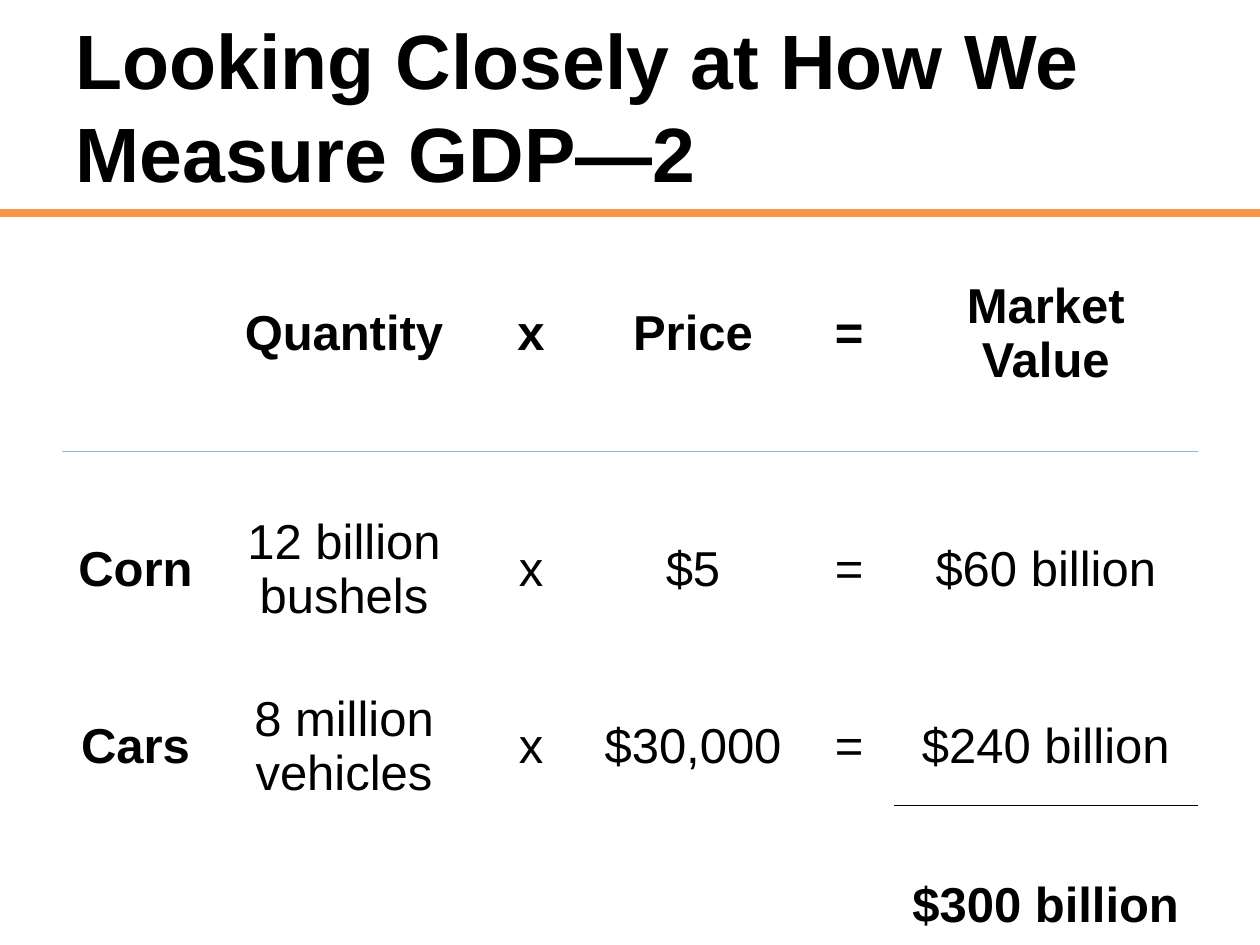
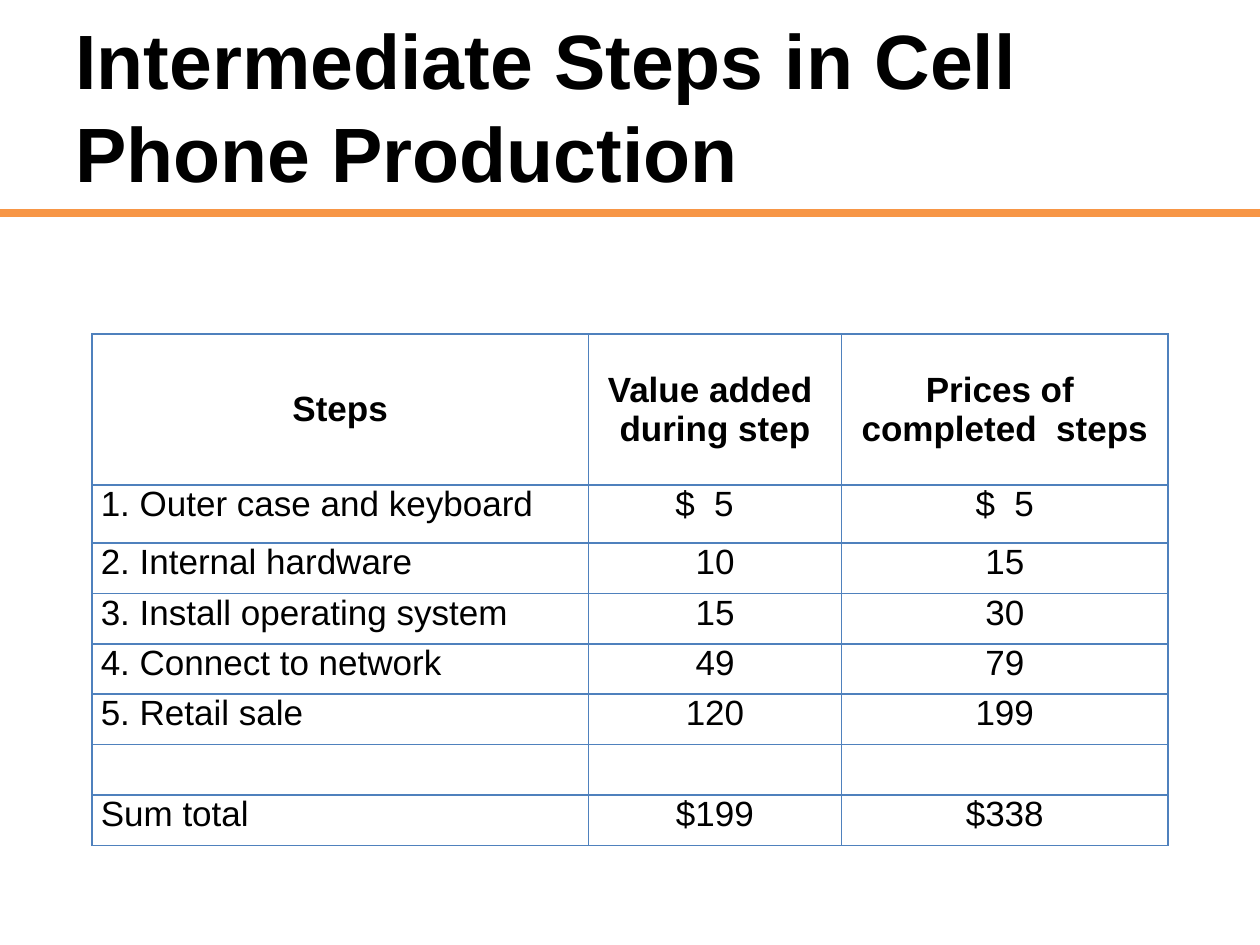
from lxml.etree import SubElement
from pptx import Presentation
from pptx.dml.color import RGBColor
from pptx.enum.shapes import MSO_CONNECTOR
from pptx.enum.text import MSO_ANCHOR, PP_ALIGN
from pptx.oxml.ns import qn
from pptx.util import Inches, Pt

COLORS = {"text": "000000", "rule": "F79646", "header_line": "95B3D7", "grid": "4F81BD"}
FONT = "Arial"
WIDTH, HEIGHT = 10, 7.5
MARGIN = WIDTH / 20
TITLE_HEIGHT, RULE_TOP = 1.67, 1.69
CELL_INSETS = {"margin_left": 0.07, "margin_right": 0.07, "margin_top": 0, "margin_bottom": 0}
TITLE_FORMAT = {"name": FONT, "size": Pt(44), "bold": True}
SIDES = {"left": "a:lnL", "right": "a:lnR", "top": "a:lnT", "bottom": "a:lnB"}
CENTERED_MIDDLE = (PP_ALIGN.CENTER, MSO_ANCHOR.MIDDLE)

SPACER = [""] * 6
MARKET_VALUE = {
    "title": "Looking Closely at How We Measure GDP—2",
    "origin": (MARGIN, 2.18),
    "columns": [1.15, 2.16, 0.81, 1.76, 0.72, 2.4],
    "rows": [0.93, 0.47, 0.47, 0.93, 0.47, 0.93, 0.47, 0.65],
    "cells": [
        ["", "Quantity", "x", "Price", "=", "Market Value"],
        SPACER,
        SPACER,
        ["Corn", "12 billion bushels", "x", "$5", "=", "$60 billion"],
        SPACER,
        ["Cars", "8 million vehicles", "x", "$30,000", "=", "$240 billion"],
        SPACER,
        ["", "", "", "", "", "$300 billion"],
    ],
    "size": 28,
}
PHONE_STEPS = {
    "title": "Intermediate Steps in Cell Phone Production",
    "origin": (0.73, 2.65),
    "columns": [3.94, 2.01, 2.59],
    "rows": [1.2, 0.46] + [0.4] * 6,
    "cells": [
        ["Steps", "Value added \nduring step", "Prices of \ncompleted  steps"],
        ["1. Outer case and keyboard", "$  5", "$  5"],
        ["2. Internal hardware", "10", "15"],
        ["3. Install operating system", "15", "30"],
        ["4. Connect to network", "49", "79"],
        ["5. Retail sale", "120", "199"],
        ["", "", ""],
        ["Sum total", "$199", "$338"],
    ],
    "size": 20,
}


def set_attributes(target, values):
    for name, value in values.items():
        setattr(target, name, value)


def format_font(font, values):
    set_attributes(font, values)
    font.color.rgb = RGBColor.from_string(COLORS["text"])


def add_titled_slide(presentation, title):
    slide = presentation.slides.add_slide(presentation.slide_layouts[6])
    rule = slide.shapes.add_connector(
        MSO_CONNECTOR.STRAIGHT, 0, Inches(RULE_TOP), Inches(WIDTH), Inches(RULE_TOP))
    rule.line.width = Pt(4.5)
    rule.line.color.rgb = RGBColor.from_string(COLORS["rule"])
    SubElement(rule.element.spPr, qn("a:effectLst"))
    title_box = slide.shapes.add_textbox(
        Inches(MARGIN), 0, Inches(WIDTH - 2 * MARGIN), Inches(TITLE_HEIGHT))
    frame = title_box.text_frame
    set_attributes(frame, {"word_wrap": True, "vertical_anchor": MSO_ANCHOR.MIDDLE, "text": title})
    format_font(frame.paragraphs[0].runs[0].font, TITLE_FORMAT)
    return slide


def draw_borders(cell, borders):
    properties = cell._tc.get_or_add_tcPr()
    for side, tag in SIDES.items():
        if side in borders:
            line = SubElement(properties, qn(tag), w=str(Pt(1)))
            fill = SubElement(line, qn("a:solidFill"))
            SubElement(fill, qn("a:srgbClr"), val=COLORS[borders[side]])


def fill_cell(cell, text, size, bold, placement, borders):
    draw_borders(cell, borders)
    cell.fill.background()
    set_attributes(cell, {name: Inches(value) for name, value in CELL_INSETS.items()})
    alignment, cell.vertical_anchor = placement
    cell.text = text
    for paragraph in cell.text_frame.paragraphs:
        paragraph.alignment = alignment
        for run in paragraph.runs:
            format_font(run.font, {"name": FONT, "size": Pt(size), "bold": bold})


def add_table(slide, content, is_bold, placement, borders):
    columns, rows, cells = content["columns"], content["rows"], content["cells"]
    left, top = content["origin"]
    table = slide.shapes.add_table(
        len(rows), len(columns), Inches(left), Inches(top),
        Inches(sum(columns)), Inches(sum(rows))).table
    set_attributes(table, {"first_row": False, "horz_banding": False})
    for column, width in zip(table.columns, columns):
        column.width = Inches(width)
    for row, height in zip(table.rows, rows):
        row.height = Inches(height)
    for i, texts in enumerate(cells):
        for j, text in enumerate(texts):
            fill_cell(table.cell(i, j), text, content["size"], is_bold(i, j),
                      placement(i, j), borders(i, j))
    return table


def market_borders(row, column):
    lines = {1: {"bottom": "header_line"}, 2: {"top": "header_line"}}
    if column == 5:
        lines.update({5: {"bottom": "text"}, 6: {"top": "text"}})
    return lines.get(row, {})


def steps_placement(row, column):
    if row == 0:
        return CENTERED_MIDDLE
    centered = column > 0 and (row, column) != (1, 1)
    return (PP_ALIGN.CENTER if centered else PP_ALIGN.LEFT), MSO_ANCHOR.TOP


def main():
    presentation = Presentation()
    set_attributes(presentation, {"slide_width": Inches(WIDTH), "slide_height": Inches(HEIGHT)})

    slide = add_titled_slide(presentation, MARKET_VALUE["title"])
    add_table(slide, MARKET_VALUE,
              is_bold=lambda row, column: row in (0, 7) or column == 0,
              placement=lambda row, column: CENTERED_MIDDLE,
              borders=market_borders)

    slide = add_titled_slide(presentation, PHONE_STEPS["title"])
    steps_table = add_table(slide, PHONE_STEPS,
                            is_bold=lambda row, column: row == 0,
                            placement=steps_placement,
                            borders=lambda row, column: dict.fromkeys(SIDES, "grid"))
    steps_table.cell(1, 1).margin_left = Inches(0.69)

    presentation.save("out.pptx")


if __name__ == "__main__":
    main()
